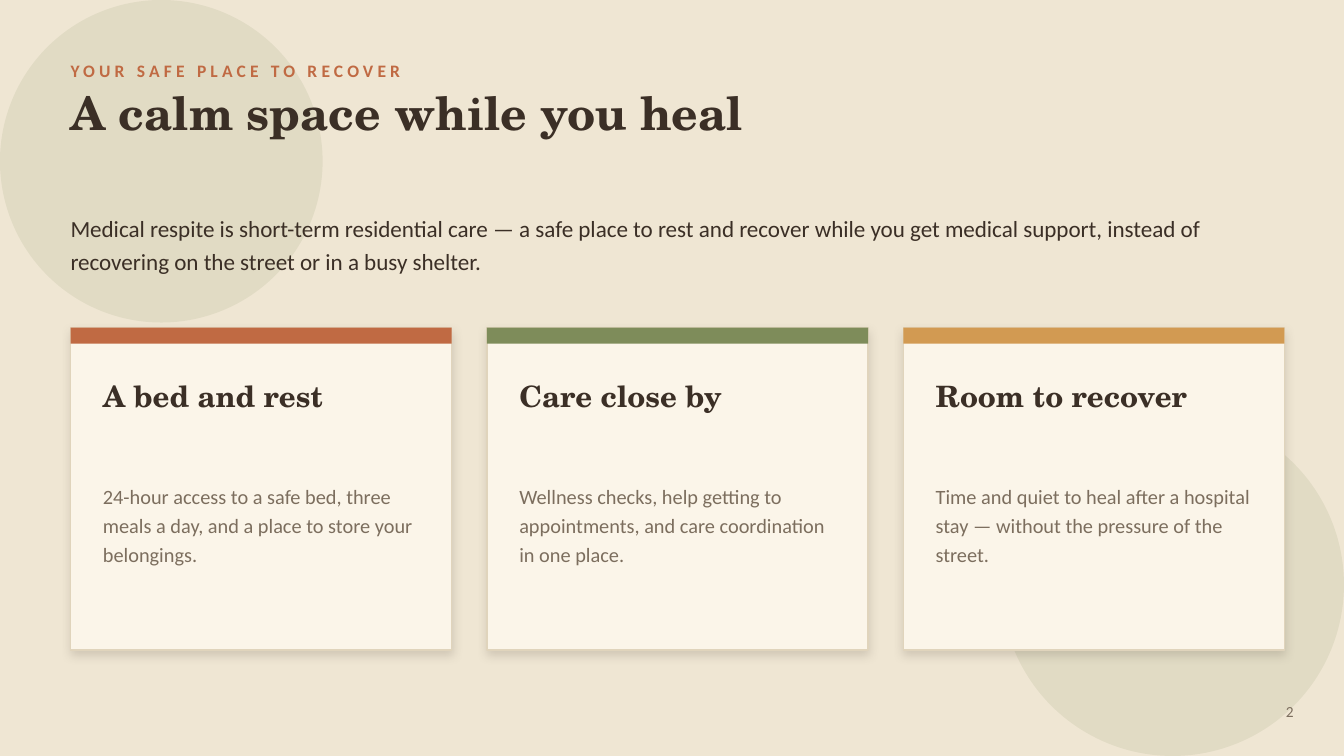
"""Build the slide about a calm space while you heal."""
from lxml.etree import SubElement
from pptx import Presentation
from pptx.dml.color import RGBColor
from pptx.enum.shapes import MSO_SHAPE
from pptx.enum.text import MSO_ANCHOR, PP_ALIGN
from pptx.oxml.ns import qn
from pptx.util import Emu, Pt

PX = 9144
SAND = RGBColor(0xEF, 0xE6, 0xD3)
CREAM = RGBColor(0xFB, 0xF5, 0xE9)
EDGE = RGBColor(0xE0, 0xD4, 0xBC)
BROWN = RGBColor(0x3B, 0x2F, 0x26)
TAUPE = RGBColor(0x7C, 0x6E, 0x5E)
RUST = RGBColor(0xC0, 0x6A, 0x43)
OLIVE = RGBColor(0x7E, 0x8C, 0x5A)
OCHRE = RGBColor(0xD2, 0x9A, 0x52)

SANS, SERIF = "Calibri", "TeX Gyre Schola"
KICKER = {"name": SANS, "size": Pt(12.5), "bold": True}
TITLE = {"name": SERIF, "size": Pt(33), "bold": True}
LEAD = {"name": SANS, "size": Pt(16.5)}
HEADING = {"name": SERIF, "size": Pt(21), "bold": True}
BODY = {"name": SANS, "size": Pt(14.5)}
NUMBER = {"name": SANS, "size": Pt(11)}

LEFT, CARD_TOP, CARD_W, CARD_H, CARD_STEP = 70, 325, 378, 320, 413
BAR_H, PAD = 16, 32
CARDS = [
    (RUST, "A bed and rest",
     "24-hour access to a safe bed, three meals a day, and a place to store your belongings."),
    (OLIVE, "Care close by",
     "Wellness checks, help getting to appointments, and care coordination in one place."),
    (OCHRE, "Room to recover",
     "Time and quiet to heal after a hospital stay — without the pressure of the street."),
]


def px(*lengths):
    """Turn pixel lengths into EMU."""
    return [Emu(n * PX) for n in lengths]


def add_block(slide, kind, box, color):
    """Add a flat filled shape without an outline."""
    s = slide.shapes.add_shape(kind, *px(*box))
    s.shadow.inherit = False
    s.fill.solid()
    s.fill.fore_color.rgb = color
    s.line.fill.background()
    return s


def add_circle(slide, left, top, size):
    """Add a faint olive circle."""
    s = add_block(slide, MSO_SHAPE.OVAL, (left, top, size, size), OLIVE)
    color = s._element.spPr.find(qn("a:solidFill"))[0]
    SubElement(color, qn("a:alpha"), val="12000")


def add_shadow(s):
    """Give a shape a soft shadow below it."""
    effects = s._element.spPr.find(qn("a:effectLst"))
    shadow = SubElement(effects, qn("a:outerShdw"), blurRad=str(Pt(7)),
                        dist=str(Pt(3)), dir="5400000", algn="bl", rotWithShape="0")
    color = SubElement(shadow, qn("a:srgbClr"), val=str(BROWN))
    SubElement(color, qn("a:alpha"), val="16000")


def add_text(slide, box, text, style, color, anchor=MSO_ANCHOR.TOP,
             leading=None, align=PP_ALIGN.LEFT, inset=(0, 0), tracking=None):
    """Add a wrapped text box holding one paragraph."""
    tf = slide.shapes.add_textbox(*px(*box)).text_frame
    tf.word_wrap = True
    tf.vertical_anchor = anchor
    tf.margin_left = tf.margin_right = Emu(inset[0] * PX)
    tf.margin_top = tf.margin_bottom = Emu(inset[1] * PX)
    p = tf.paragraphs[0]
    p.alignment = align
    if leading:
        p.line_spacing = Pt(leading)
    r = p.add_run()
    r.text = text
    for name, value in style.items():
        setattr(r.font, name, value)
    r.font.color.rgb = color
    if tracking:
        r._r.get_or_add_rPr().set("spc", str(tracking * 100))


def add_card(slide, left, accent, heading, body):
    """Add a card with an accent bar, a heading and a body."""
    s = add_block(slide, MSO_SHAPE.RECTANGLE, (left, CARD_TOP, CARD_W, CARD_H), CREAM)
    s.line.color.rgb = EDGE
    s.line.width = Pt(1)
    add_shadow(s)
    add_block(slide, MSO_SHAPE.RECTANGLE, (left, CARD_TOP, CARD_W, BAR_H), accent)
    text_left, text_w = left + PAD, CARD_W - 60
    add_text(slide, (text_left, CARD_TOP + 50, text_w, 90), heading, HEADING, BROWN)
    add_text(slide, (text_left, CARD_TOP + 150, text_w, 150), body, BODY, TAUPE, leading=21)


def main():
    """Build and save the slide."""
    prs = Presentation()
    prs.slide_width, prs.slide_height = px(1333, 750)
    slide = prs.slides.add_slide(prs.slide_layouts[6])
    slide.background.fill.solid()
    slide.background.fill.fore_color.rgb = SAND

    add_circle(slide, 0, 0, 320)
    add_circle(slide, 993, 410, 340)
    add_text(slide, (LEFT, 50, 900, 40), "YOUR SAFE PLACE TO RECOVER", KICKER, RUST,
             anchor=MSO_ANCHOR.MIDDLE, tracking=3)
    add_text(slide, (LEFT, 84, 1190, 100), "A calm space while you heal", TITLE, BROWN)
    add_text(slide, (LEFT, 195, 1160, 90),
             "Medical respite is short-term residential care — a safe place to rest and "
             "recover while you get medical support, instead of recovering on the street "
             "or in a busy shelter.",
             LEAD, BROWN, anchor=MSO_ANCHOR.MIDDLE, leading=24)
    for i, card in enumerate(CARDS):
        add_card(slide, LEFT + i * CARD_STEP, *card)
    add_text(slide, (1243, 688, 50, 35), "2", NUMBER, TAUPE, anchor=MSO_ANCHOR.MIDDLE,
             align=PP_ALIGN.RIGHT, inset=(10, 5))
    prs.save("out.pptx")


if __name__ == "__main__":
    main()
